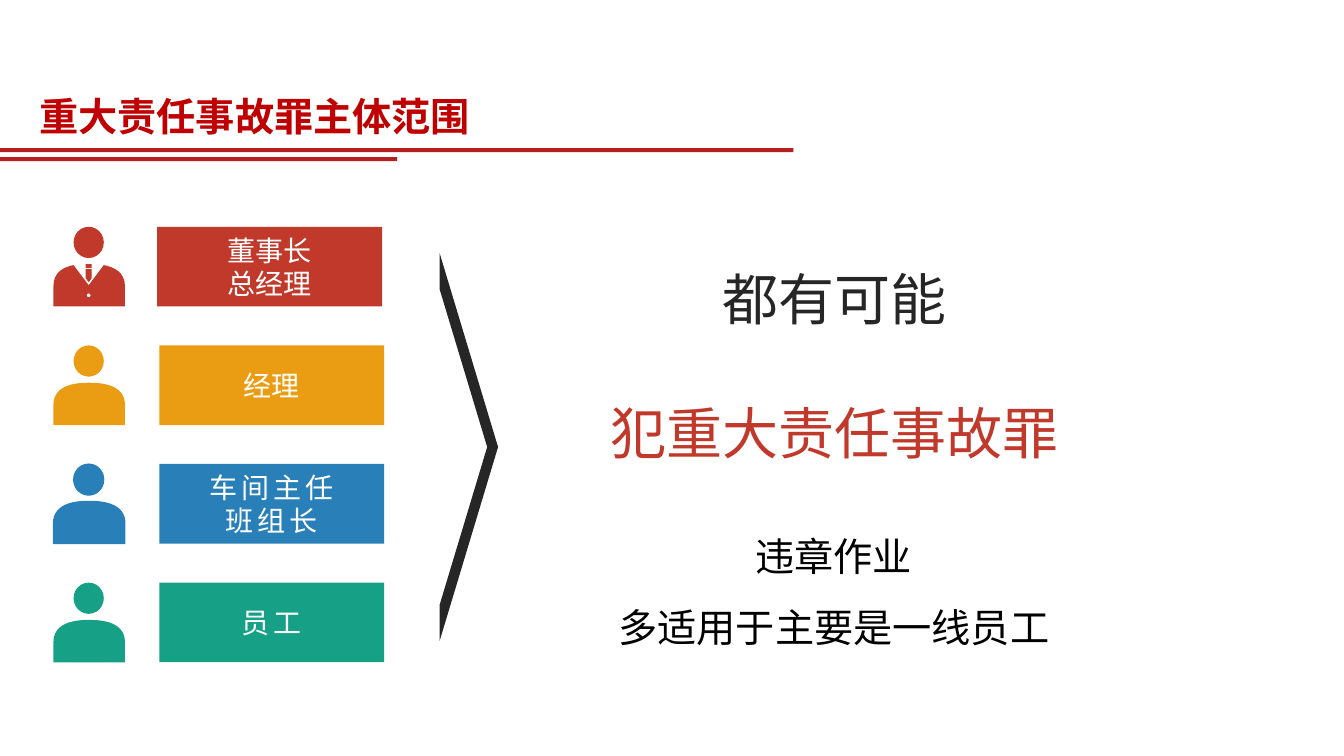
from dataclasses import dataclass
from itertools import chain

from lxml.etree import SubElement
from pptx import Presentation
from pptx.dml.color import RGBColor
from pptx.enum.shapes import MSO_SHAPE
from pptx.enum.text import MSO_ANCHOR, MSO_AUTO_SIZE, PP_ALIGN
from pptx.oxml.ns import qn
from pptx.shapes.base import BaseShape
from pptx.shapes.shapetree import GroupShapes
from pptx.text.text import TextFrame
from pptx.util import Inches, Pt

CJK = "Noto Sans CJK SC"
DARK, RED = "262626", "C0392B"
FIRST_TOP, LAST_TOP = 2.25, 5.78
Point = tuple[float, float]
Segment = tuple[Point, ...]
Box = tuple[float, float, float, float]


@dataclass
class Contour:
    """A closed outline of segments: one point is a line, three are a curve."""
    start: Point
    segments: list[Segment]


@dataclass
class Role:
    """One row: a person icon and a labelled bar."""
    label: str
    color: str
    bar_left: float = 1.58
    spacing: int = 0
    outline: float = 0
    suited: bool = False


@dataclass
class Statement:
    """A centred text box with one colour per paragraph."""
    box: Box
    lines: list[tuple[str, str]]
    size: int
    line_spacing: float
    wrap: bool = True


ROLES = [
    Role("董事长\n总经理", RED, bar_left=1.56, suited=True),
    Role("经理", "EA9C12"),
    Role("车间主任\n班组长", "2980B9", spacing=3, outline=0.75),
    Role("员工", "16A085", spacing=3),
]
STATEMENTS = [
    Statement((5.36, 1.91, 5.83, 2.6), [("都有可能", DARK), ("犯重大责任事故罪", RED)], 40, 2.0),
    Statement((6.01, 5, 4.52, 1.44),
              [("违章作业", "000000"), ("多适用于主要是一线员工", "000000")], 28, 1.5, wrap=False),
]

TORSO = Contour((1.24, 0.79), [
    ((1.24, 0.59),),
    ((1.24, 0.38), (0.99, 0.37), (0.88, 0.37)),
    ((0.78, 0.37), (0.53, 0.38), (0.53, 0.59)),
    ((0.53, 0.79),),
])
JACKET = Contour((1.03, 0.38), [
    ((0.88, 0.58),),
    ((0.73, 0.38),),
    ((0.63, 0.4), (0.53, 0.45), (0.53, 0.59)),
    ((0.53, 0.79),),
    ((1.24, 0.79),),
    ((1.24, 0.59),),
    ((1.24, 0.45), (1.13, 0.4), (1.03, 0.38)),
])
BUTTON = Contour((0.88, 0.7), [
    ((0.87, 0.7), (0.86, 0.69), (0.86, 0.68)),
    ((0.86, 0.67), (0.87, 0.66), (0.88, 0.66)),
    ((0.89, 0.66), (0.9, 0.67), (0.9, 0.68)),
    ((0.9, 0.69), (0.89, 0.7), (0.88, 0.7)),
])
TIE = Contour((0.88, 0.55), [
    ((0.91, 0.51),), ((0.91, 0.42),), ((0.85, 0.42),), ((0.85, 0.51),),
])


def rgb(color: str) -> RGBColor:
    """Turn a hex string into a colour."""
    return RGBColor.from_string(color)


def paint(shape: BaseShape, color: str, outline: float = 0) -> None:
    """Fill a shape flat, with an optional outline of the same colour."""
    shape.shadow.inherit = False
    shape.fill.solid()
    shape.fill.fore_color.rgb = rgb(color)
    if outline:
        shape.line.color.rgb = rgb(color)
        shape.line.width = Pt(outline)
    else:
        shape.line.fill.background()


def add_solid(shapes: GroupShapes, kind: MSO_SHAPE, box: Box, color: str,
              outline: float = 0) -> BaseShape:
    """Add a flat preset shape."""
    shape = shapes.add_shape(kind, *map(Inches, box))
    paint(shape, color, outline)
    return shape


def style_text(frame: TextFrame, colors: list[str], size: int, align: PP_ALIGN,
               font: str = CJK, bold: bool = False, spacing: int = 0,
               line_spacing: float = 1.0) -> None:
    """Format every paragraph of a frame, one colour each."""
    for para, color in zip(frame.paragraphs, colors):
        para.alignment = align
        para.line_spacing = line_spacing
        for span in para.runs:
            span.font.size = Pt(size)
            span.font.bold = bold
            span.font.name = font
            span.font.color.rgb = rgb(color)
            properties = span.font._element
            SubElement(properties, qn("a:ea")).set("typeface", CJK)
            if spacing:
                properties.set("spc", str(spacing * 100))


def add_outline(shapes: GroupShapes, contours: list[Contour], top: float, color: str,
                outline: float = 0) -> None:
    """Add a filled freeform of lines and curves, measured from the row top."""
    def place(point: Point) -> Point:
        return Inches(point[0]), Inches(top + point[1])

    builder = shapes.build_freeform(*place(contours[0].start))
    for contour in contours:
        if contour is not contours[0]:
            builder.move_to(*place(contour.start))
        builder.add_line_segments(map(place, chain(*contour.segments)), close=True)
    shape = builder.convert_to_shape()
    paint(shape, color, outline)

    nodes = iter(list(shape._element.iter(qn("a:lnTo"))))
    for segment in chain(*(contour.segments for contour in contours)):
        first, *others = [next(nodes) for point in segment]
        if others:
            first.tag = qn("a:cubicBezTo")
        for node in others:
            first.append(node[0])
            node.getparent().remove(node)


def add_role(shapes: GroupShapes, role: Role, top: float) -> None:
    """Draw the bar and the person of one row."""
    bar = add_solid(shapes, MSO_SHAPE.RECTANGLE, (role.bar_left, top, 2.23, 0.79), role.color)
    frame = bar.text_frame
    frame.text = role.label
    frame.word_wrap = True
    frame.vertical_anchor = MSO_ANCHOR.MIDDLE
    style_text(frame, ["FFFFFF"] * len(frame.paragraphs), 20, PP_ALIGN.CENTER,
               spacing=role.spacing)
    add_solid(shapes, MSO_SHAPE.OVAL, (0.73, top, 0.3, 0.31), role.color, role.outline)
    if role.suited:
        add_solid(shapes, MSO_SHAPE.RECTANGLE, (0.85, top + 0.37, 0.06, 0.04), role.color)
        add_outline(shapes, [TIE], top, role.color)
        add_outline(shapes, [JACKET, BUTTON], top, role.color)
    else:
        add_outline(shapes, [TORSO], top, role.color, role.outline)


def main() -> None:
    """Build the slide and save it."""
    deck = Presentation()
    deck.slide_width, deck.slide_height = Inches(13.33), Inches(7.5)
    page = deck.slides.add_slide(deck.slide_layouts[5])

    title = page.shapes.title
    title.left, title.top, title.width, title.height = map(Inches, (0.29, 0.87, 11.97, 0.57))
    title.text_frame.text = "重大责任事故罪主体范围"
    title.text_frame.auto_size = MSO_AUTO_SIZE.SHAPE_TO_FIT_TEXT
    title.text_frame.vertical_anchor = MSO_ANCHOR.TOP
    style_text(title.text_frame, ["C00000"], 28, PP_ALIGN.LEFT, font="Arial", bold=True)
    for top, width in ((1.47, 7.87), (1.56, 3.94)):
        add_solid(page.shapes, MSO_SHAPE.RECTANGLE, (0, top, width, 0.04), "B61F22")

    pitch = (LAST_TOP - FIRST_TOP) / (len(ROLES) - 1)
    for index, role in enumerate(ROLES):
        add_role(page.shapes.add_group_shape().shapes, role, FIRST_TOP + index * pitch)

    arrow = add_solid(page.shapes, MSO_SHAPE.NOTCHED_RIGHT_ARROW, (4.36, 2.51, 0.58, 3.85), DARK)
    arrow.adjustments[0], arrow.adjustments[1] = 0.814, 1

    for statement in STATEMENTS:
        frame = page.shapes.add_textbox(*map(Inches, statement.box)).text_frame
        frame.word_wrap = statement.wrap
        frame.auto_size = MSO_AUTO_SIZE.SHAPE_TO_FIT_TEXT
        frame.text = "\n".join(text for text, color in statement.lines)
        style_text(frame, [color for text, color in statement.lines], statement.size,
                   PP_ALIGN.CENTER, line_spacing=statement.line_spacing)

    deck.save("out.pptx")


if __name__ == "__main__":
    main()
